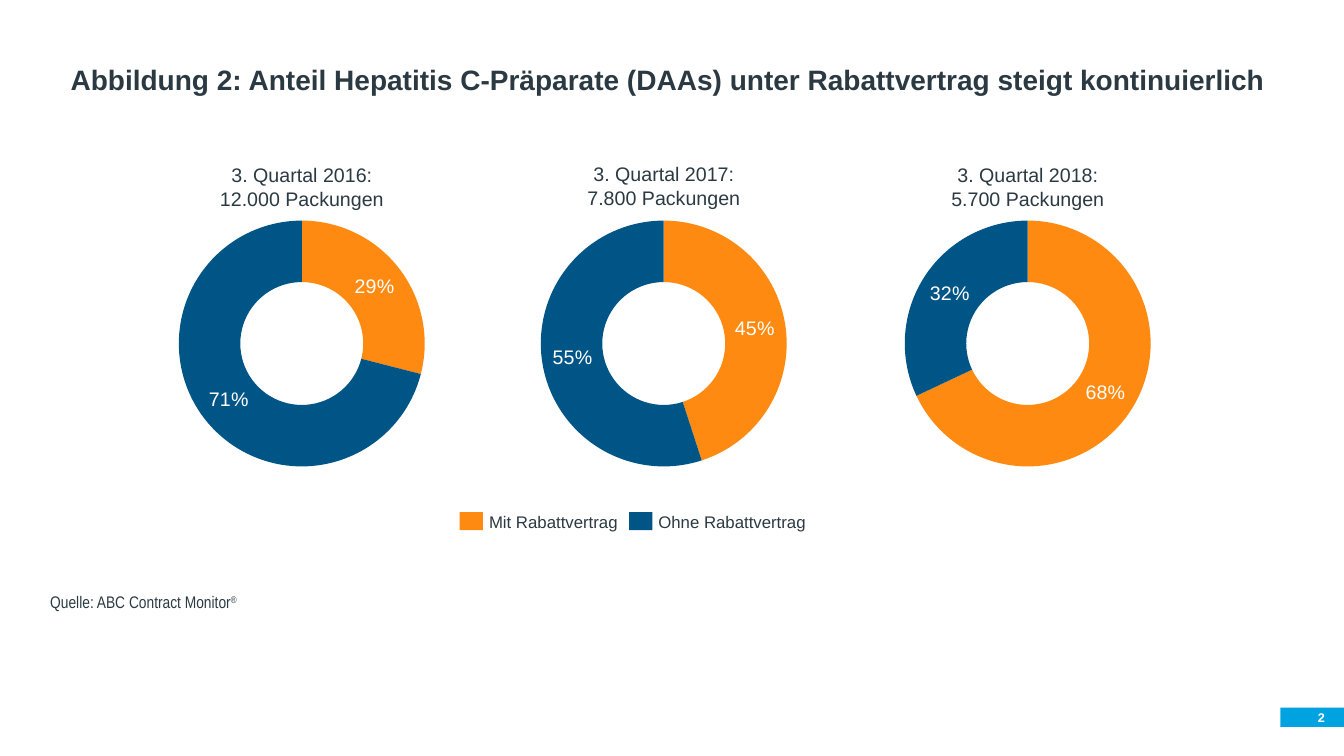
from lxml import etree
from pptx import Presentation
from pptx import util as u
from pptx.chart.data import CategoryChartData
from pptx.dml.color import RGBColor
from pptx.enum import chart as ch, shapes, text
from pptx.oxml import parse_xml
from pptx.oxml.ns import nsdecls, qn

INK = RGBColor(0x2B, 0x3A, 0x42)
WHITE = RGBColor(0xFF, 0xFF, 0xFF)
CYAN = RGBColor(0x00, 0xA3, 0xE0)
ORANGE = RGBColor(0xFE, 0x8A, 0x12)
NAVY = RGBColor(0x00, 0x55, 0x87)

MARGINS = ("margin_left", "margin_top", "margin_right", "margin_bottom")
PLOT_LAYOUT = {"layoutTarget": "inner", "xMode": "edge", "yMode": "edge",
               "x": 0.083, "y": 0.034, "w": 0.833, "h": 0.931}

# caption lines, share with and without contract, chart left, caption top
QUARTERS = [
    (("3. Quartal 2016:", "12.000 Packungen"), (29, 71), 1.53, 1.57),
    (("3. Quartal 2017:", "7.800 Packungen"), (45, 55), 5.12, 1.56),
    (("3. Quartal 2018:", "5.700 Packungen"), (68, 32), 8.73, 1.57),
]
LEGEND = [("Mit Rabattvertrag", ORANGE, 4.56, 1.28),
          ("Ohne Rabattvertrag", NAVY, 6.24, 1.46)]


def inches(*box):
    return [u.Inches(v) for v in box]


def set_font(font, size, color=INK, **extra):
    values = {"name": "Arial", "size": u.Pt(size), "bold": False, **extra}
    for key, value in values.items():
        setattr(font, key, value)
    font.color.rgb = color


def set_frame(tf, anchor, wrap=False, inset=None):
    tf.auto_size = text.MSO_AUTO_SIZE.NONE
    tf.word_wrap = wrap
    tf.vertical_anchor = anchor
    if inset is not None:
        for key in MARGINS:
            setattr(tf, key, u.Inches(inset))


def add_text(s, box, lines, size, align=text.PP_ALIGN.LEFT,
             anchor=text.MSO_ANCHOR.MIDDLE, color=INK, inset=None, **extra):
    """Add one paragraph whose lines are parted by line breaks."""
    tf = s.shapes.add_textbox(*inches(*box)).text_frame
    set_frame(tf, anchor, inset=inset)
    p = tf.paragraphs[0]
    p.alignment = align
    for i, line in enumerate(lines):
        if i:
            p.add_line_break()
        r = p.add_run()
        r.text = line
        set_font(r.font, size, color, **extra)


def add_block(s, box, color):
    sp = s.shapes.add_shape(shapes.MSO_SHAPE.RECTANGLE, *inches(*box))
    sp.shadow.inherit = False
    sp.fill.solid()
    sp.fill.fore_color.rgb = color
    sp.line.fill.background()
    return sp


def add_title(s, left, top, width, height):
    title = s.shapes.title
    title.left, title.top, title.width, title.height = inches(
        left, top, width, height)
    tf = title.text_frame
    set_frame(tf, text.MSO_ANCHOR.TOP)
    p = tf.paragraphs[0]
    p.alignment = text.PP_ALIGN.LEFT
    r = p.add_run()
    r.text = ("Abbildung 2: Anteil Hepatitis C-Präparate (DAAs) "
              "unter Rabattvertrag steigt kontinuierlich")
    set_font(r.font, 20, bold=True)


def fix_plot_area(chart):
    """Pin the inner plot area to fixed fractions of the chart."""
    area = chart._chartSpace.chart.plotArea
    for old in area.findall(qn("c:layout")):
        area.remove(old)
    layout = parse_xml(f"<c:layout {nsdecls('c')}><c:manualLayout/></c:layout>")
    for tag, value in PLOT_LAYOUT.items():
        etree.SubElement(layout[0], qn(f"c:{tag}")).set("val", str(value))
    area.insert(0, layout)


def add_quarter(s, left, top, width, height, caption, caption_top, shares):
    data = CategoryChartData(number_format='0"%"')
    data.categories = ["1", "2"]
    data.add_series("Series 1", shares)
    chart = s.shapes.add_chart(ch.XL_CHART_TYPE.DOUGHNUT,
                               *inches(left, top, width, height), data).chart
    chart.has_legend = chart.has_title = False
    set_font(chart.font, 10)
    fix_plot_area(chart)
    plot = chart.plots[0]
    plot.vary_by_categories = True
    for i, color in enumerate((ORANGE, NAVY)):
        fmt = plot.series[0].points[i].format
        fmt.fill.solid()
        fmt.fill.fore_color.rgb = color
        fmt.line.fill.background()
    plot.has_data_labels = True
    labels = plot.data_labels
    labels.show_value = True
    labels.show_percentage = False
    labels.number_format = '0"%"'
    labels.number_format_is_linked = False
    set_font(labels.font, 14, WHITE)
    add_text(s, (left, caption_top, width, 0.57), caption, 14,
             align=text.PP_ALIGN.CENTER, anchor=text.MSO_ANCHOR.TOP)


def add_legend(s, top):
    for label, color, left, width in LEGEND:
        add_block(s, (left, top, 0.23, 0.18), color)
        add_text(s, (left + 0.29, top, width, 0.2), [label], 12, inset=0)


def add_source(s, left, top, width, height):
    tf = add_block(s, (left, top, width, height), WHITE).text_frame
    set_frame(tf, text.MSO_ANCHOR.BOTTOM, wrap=True)
    p = tf.paragraphs[0]
    p.alignment = text.PP_ALIGN.LEFT
    for part in ("Quelle: ABC Contract Monitor", "®"):
        r = p.add_run()
        r.text = part
        set_font(r.font, 12, name="Arial Narrow")
    r.font._element.set("baseline", "30000")


def add_page_number(s, left, top, width, height):
    add_block(s, (left, top, width, height), CYAN)
    add_text(s, (left, top, width - 0.19, height), ["2"], 9,
             align=text.PP_ALIGN.RIGHT, color=WHITE, inset=0, bold=True)


def main():
    prs = Presentation()
    prs.slide_width, prs.slide_height = inches(13.33, 7.5)
    s = prs.slides.add_slide(prs.slide_layouts[5])
    add_title(s, 0.6, 0.57, 12.14, 0.44)
    add_page_number(s, 12.7, 7.02, 0.63, 0.19)
    add_source(s, 0.4, 5.75, 9.97, 0.37)
    for caption, shares, left, caption_top in QUARTERS:
        add_quarter(s, left, 2.1, 2.93, 2.62, caption, caption_top, shares)
    add_legend(s, 5.08)
    prs.save("out.pptx")


if __name__ == "__main__":
    main()
